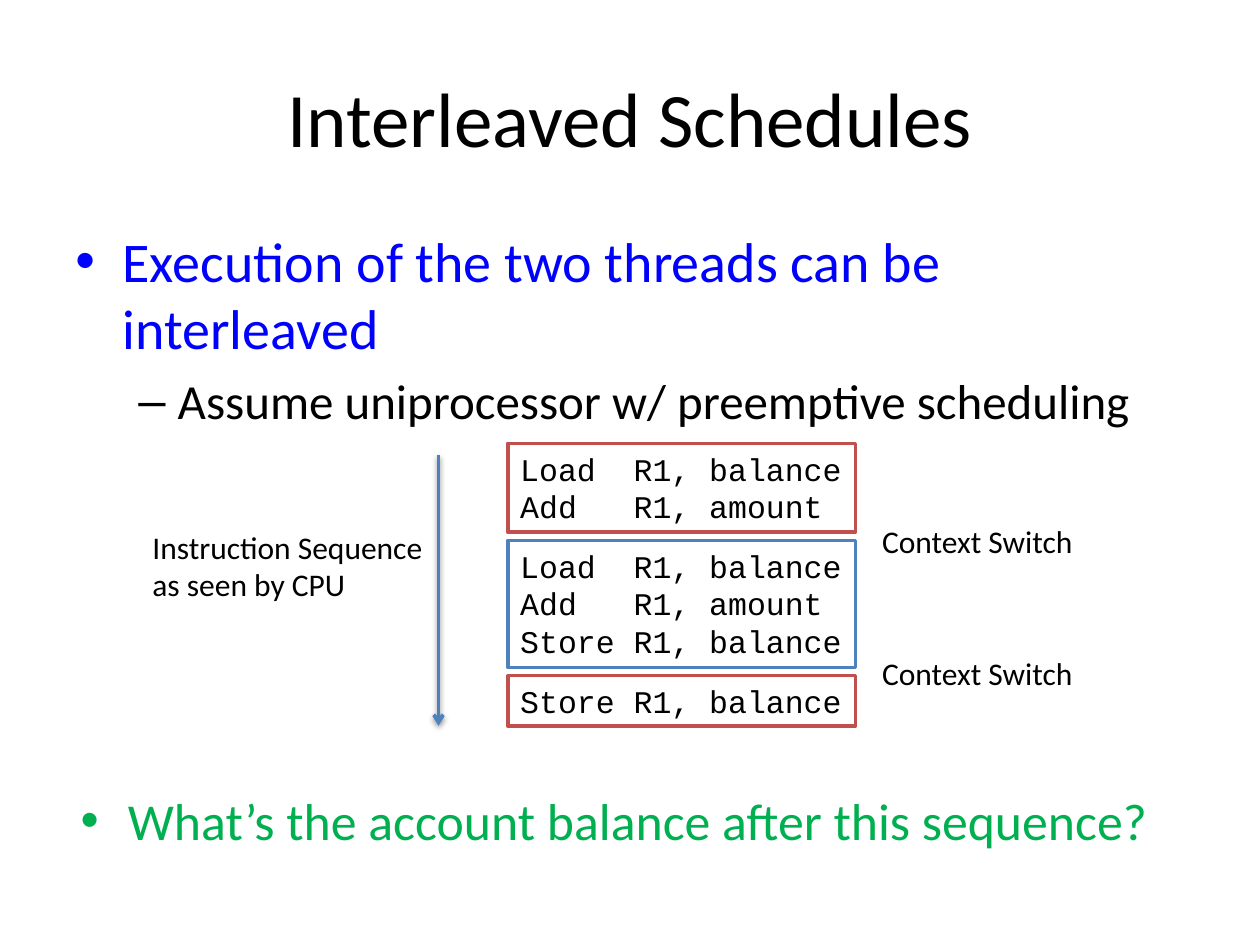
from dataclasses import dataclass

from lxml.etree import SubElement
from pptx import Presentation
from pptx.dml.color import RGBColor
from pptx.enum.shapes import MSO_CONNECTOR as Connector
from pptx.enum.shapes import MSO_SHAPE as Shape
from pptx.enum.text import MSO_ANCHOR as Anchor
from pptx.enum.text import MSO_AUTO_SIZE as AutoSize
from pptx.enum.text import PP_ALIGN as Align
from pptx.oxml.ns import qn
from pptx.util import Pt


@dataclass(frozen=True)
class Theme:
    sans: str = "Calibri"
    mono: str = "Courier New"
    black: str = "000000"
    white: str = "FFFFFF"
    point: str = "0000FF"
    question: str = "00B050"
    first_thread: str = "C0504D"
    second_thread: str = "4F81BD"
    title_size: float = 44
    point_size: float = 32
    subpoint_size: float = 28
    question_size: float = 29.6
    small_size: float = 18
    line_width: float = 2


@dataclass(frozen=True)
class Bullet:
    text: str
    mark: str
    size: float
    color: str
    margin: float = 27
    hang: float = 27
    level: int = 0


@dataclass(frozen=True)
class CodeBlock:
    lines: tuple[str, ...]
    outline: str


@dataclass(frozen=True)
class Label:
    text: str
    left: float
    top: float
    width: float
    height: float


THEME = Theme()
LOAD, ADD, STORE = "Load  R1, balance", "Add   R1, amount", "Store R1, balance"

POINTS = [
    Bullet("Execution of the two threads can be interleaved", "•", THEME.point_size, THEME.point),
    Bullet("Assume uniprocessor w/ preemptive scheduling", "–", THEME.subpoint_size, THEME.black,
           margin=58.5, hang=22.5, level=1),
]
QUESTION = [
    Bullet("What’s the account balance after this sequence?", "•",
           THEME.question_size, THEME.question),
]
BLOCKS = [
    CodeBlock((LOAD, ADD), THEME.first_thread),
    CodeBlock((LOAD, ADD, STORE), THEME.second_thread),
    CodeBlock((STORE,), THEME.first_thread),
]
LABELS = [
    Label("Instruction Sequence\nas seen by CPU", 80, 298, 170.5, 50.8),
    Label("Context Switch", 497, 294.5, 124.5, 29),
    Label("Context Switch", 497, 370, 124.5, 29),
]

BLOCK_LEFT, BLOCK_TOP, BLOCK_WIDTH, BLOCK_GAP = 290.2, 253.4, 198.7, 4.6
CODE_LINE, CODE_PADDING = 21.8, 7.2
ARROW_X, ARROW_TOP, ARROW_BOTTOM = 250.6, 260, 414.7


def style_runs(para, font: str, size: float, color: str) -> None:
    for run in para.runs:
        run.font.name = font
        run.font.size = Pt(size)
        run.font.color.rgb = RGBColor.from_string(color)


def add_title(slide, text: str) -> None:
    title = slide.shapes.title
    title.left, title.top, title.width, title.height = Pt(36), Pt(21.6), Pt(648), Pt(90)
    frame = title.text_frame
    frame.text = text
    frame.vertical_anchor = Anchor.MIDDLE
    frame.paragraphs[0].alignment = Align.CENTER
    style_runs(frame.paragraphs[0], THEME.sans, THEME.title_size, THEME.black)


def add_bullets(slide, bullets: list[Bullet], left: float, top: float, height: float) -> None:
    frame = slide.shapes.add_textbox(Pt(left), Pt(top), Pt(648), Pt(height)).text_frame
    frame.word_wrap = True
    frame.text = "\n".join(bullet.text for bullet in bullets)
    for para, bullet in zip(frame.paragraphs, bullets):
        para.level = bullet.level
        para.space_before = Pt(round(bullet.size * 0.2, 1))
        style_runs(para, THEME.sans, bullet.size, bullet.color)
        properties = para._p.get_or_add_pPr()
        properties.set("marL", str(Pt(bullet.margin)))
        properties.set("indent", str(Pt(-bullet.hang)))
        SubElement(properties, qn("a:buFont"), typeface="Arial")
        SubElement(properties, qn("a:buChar"), char=bullet.mark)


def fill_small_text(box, text: str, font: str) -> None:
    frame = box.text_frame
    frame.word_wrap = False
    frame.auto_size = AutoSize.SHAPE_TO_FIT_TEXT
    frame.vertical_anchor = Anchor.TOP
    frame.text = text
    for para in frame.paragraphs:
        para.alignment = Align.LEFT
        style_runs(para, font, THEME.small_size, THEME.black)


def add_code_blocks(slide, blocks: list[CodeBlock]) -> None:
    """Stack the blocks from top to bottom, each as tall as its lines need."""
    top = BLOCK_TOP
    for block in blocks:
        height = CODE_PADDING + CODE_LINE * len(block.lines)
        box = slide.shapes.add_shape(
            Shape.RECTANGLE, Pt(BLOCK_LEFT), Pt(top), Pt(BLOCK_WIDTH), Pt(height))
        box.shadow.inherit = False
        box.fill.solid()
        box.fill.fore_color.rgb = RGBColor.from_string(THEME.white)
        box.line.color.rgb = RGBColor.from_string(block.outline)
        box.line.width = Pt(THEME.line_width)
        fill_small_text(box, "\n".join(block.lines), THEME.mono)
        top += height + BLOCK_GAP


def add_label(slide, label: Label) -> None:
    box = slide.shapes.add_textbox(
        Pt(label.left), Pt(label.top), Pt(label.width), Pt(label.height))
    fill_small_text(box, label.text, THEME.sans)


def add_sequence_arrow(slide) -> None:
    """Draw the downward time arrow with its soft shadow."""
    arrow = slide.shapes.add_connector(
        Connector.STRAIGHT, Pt(ARROW_X), Pt(ARROW_TOP), Pt(ARROW_X), Pt(ARROW_BOTTOM))
    arrow.line.color.rgb = RGBColor.from_string(THEME.second_thread)
    arrow.line.width = Pt(THEME.line_width)
    SubElement(arrow.line._get_or_add_ln(), qn("a:tailEnd"), type="arrow")
    effects = SubElement(arrow._element.spPr, qn("a:effectLst"))
    shadow = SubElement(effects, qn("a:outerShdw"), blurRad=str(Pt(3.1)),
                        dist=str(Pt(1.6)), dir="5400000", rotWithShape="0")
    color = SubElement(shadow, qn("a:srgbClr"), val=THEME.black)
    SubElement(color, qn("a:alpha"), val="38000")


def main() -> None:
    deck = Presentation()
    deck.slide_width, deck.slide_height = Pt(720), Pt(540)
    slide = deck.slides.add_slide(deck.slide_layouts.get_by_name("Title Only"))
    add_title(slide, "Interleaved Schedules")
    add_bullets(slide, POINTS, left=36, top=126, height=123)
    add_code_blocks(slide, BLOCKS)
    add_sequence_arrow(slide)
    for label in LABELS:
        add_label(slide, label)
    add_bullets(slide, QUESTION, left=39, top=447, height=73.5)
    deck.save("out.pptx")


if __name__ == "__main__":
    main()
